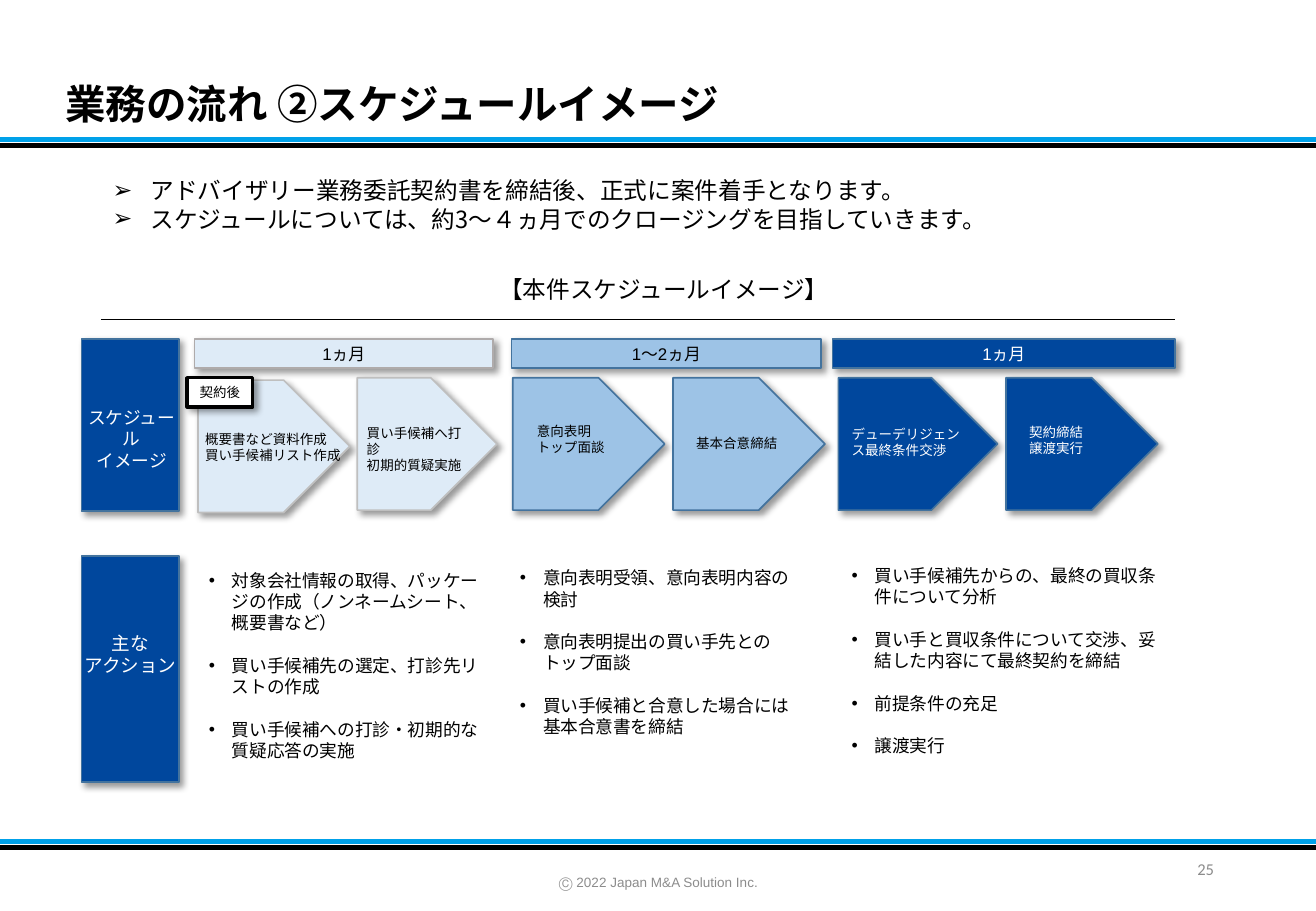
from pptx import Presentation, util as u
from pptx.dml.color import RGBColor
from pptx.enum import shapes, text
from pptx.oxml import parse_xml
from pptx.oxml.ns import nsdecls, qn
from lxml import etree

THEME = {
    "black": "000000", "white": "FFFFFF", "grey": "8C8C8C", "sky": "00A1E9",
    "navy": "00479D", "mid": "9DC3E6", "pale": "DEEBF7",
    "edge": "43739E", "pale_edge": "BFBFBF", "bar_edge": "AFABAB",
    "jp": "Noto Sans CJK JP", "latin": "Arial", "number": "Calibri",
    "title": 24, "lead": 14, "label": 11, "body": 10.5, "bar": 10, "page": 9.8, "small": 8,
}
LEFT, CENTER, RIGHT = text.PP_ALIGN.LEFT, text.PP_ALIGN.CENTER, text.PP_ALIGN.RIGHT
TOP, MIDDLE = text.MSO_ANCHOR.TOP, text.MSO_ANCHOR.MIDDLE
RECT, PLATE = shapes.MSO_SHAPE.RECTANGLE, shapes.MSO_SHAPE.PENTAGON

deck = Presentation()
deck.slide_width, deck.slide_height = u.Inches(10.83), u.Inches(7.5)
COL, ROW = deck.slide_width / 100, deck.slide_height / 100
slide = deck.slides.add_slide(deck.slide_layouts[6])


def place(area, lines=(), size="small", color="black", font="latin", align=LEFT, anchor=TOP,
          bullet=None, gap=0, bold=False, wrap=True, kind=None, fill="white", edge=None, weight=1):
    """Put a text box, or a preset shape when kind is given, on the 100 x 100 grid."""
    x, y, w, h = area
    frame = [int(v) for v in (x * COL, y * ROW, w * COL, h * ROW)]
    if kind is None:
        item = slide.shapes.add_textbox(*frame)
    else:
        item = slide.shapes.add_shape(kind, *frame)
        item.shadow.inherit = False
        item.fill.solid()
        item.fill.fore_color.rgb = RGBColor.from_string(THEME[fill])
        if edge:
            item.line.color.rgb = RGBColor.from_string(THEME[edge])
            item.line.width = u.Pt(weight)
            item._element.spPr.find(qn("a:effectLst")).append(parse_xml(
                f'<a:outerShdw {nsdecls("a")} blurRad="50800" dist="38100" dir="2700000" algn="tl" '
                'rotWithShape="0"><a:srgbClr val="000000"><a:alpha val="40000"/></a:srgbClr></a:outerShdw>'))
        else:
            item.line.fill.background()
    body = item.text_frame
    body.word_wrap, body.vertical_anchor = wrap, anchor
    for i, line in enumerate(lines):
        para = body.add_paragraph() if i else body.paragraphs[0]
        para.alignment = align
        para.line_spacing = u.Pt(THEME[size] * 1.2)
        if i and gap:
            para.space_before = u.Pt(gap)
        if bullet:
            mark, indent = bullet
            props = para._p.get_or_add_pPr()
            props.set("marL", str(u.Inches(indent)))
            props.set("indent", str(-u.Inches(indent)))
            etree.SubElement(props, qn("a:buFont")).set("typeface", THEME["latin"])
            etree.SubElement(props, qn("a:buChar")).set("char", mark)
        run = para.add_run()
        run.text = line
        run.font.size, run.font.bold, run.font.name = u.Pt(THEME[size]), bold, THEME[font]
        run.font.color.rgb = RGBColor.from_string(THEME[color])
        etree.SubElement(run._r.get_or_add_rPr(), qn("a:ea")).set("typeface", THEME["jp"])


def rule(x1, x2, y, color, weight):
    line = slide.shapes.add_connector(shapes.MSO_CONNECTOR.STRAIGHT, int(x1 * COL), int(y * ROW),
                                      int(x2 * COL), int(y * ROW))
    line.line.color.rgb = RGBColor.from_string(THEME[color])
    line.line.width = u.Pt(weight)
    etree.SubElement(line._element.spPr, qn("a:effectLst"))


# Page frame
for sky_y, black_y in ((92.4, 93.07), (15.33, 16)):
    rule(0, 100, sky_y, "sky", 3)
    rule(0, 100, black_y, "black", 3)
place((4.06, 8.27, 74.79, 6.13), ["業務の流れ ②スケジュールイメージ"], "title", font="jp",
      anchor=MIDDLE, bold=True)
place((34.44, 94.8, 31.21, 4), ["Ⓒ 2022 Japan M&A Solution Inc."], color="grey",
      align=CENTER, anchor=MIDDLE)
place((70.64, 92.67, 22.53, 5.33), ["25"], "page", "grey", "number", RIGHT, MIDDLE)

# Introduction and schedule heading
place((7.66, 18.67, 86.33, 7.6),
      ["アドバイザリー業務委託契約書を締結後、正式に案件着手となります。",
       "スケジュールについては、約3～４ヵ月でのクロージングを目指していきます。"],
      "lead", font="jp", bullet=("➢", 0.31))
rule(7.66, 89.29, 35.07, "black", 0.5)
place((37.03, 29.47, 27.33, 4.53), ["【本件スケジュールイメージ】"], "lead", font="jp", kind=RECT)

# Row labels
row_labels = [
    ((37.2, 18.93), (5.17, 44, 9.7, 6.27), "body", ["スケジュール", "イメージ"]),
    ((61.07, 24.8), (5.08, 68.67, 9.7, 8.8), "label", ["主な", "アクション"]),
]
for (y, h), label_area, size, lines in row_labels:
    place((6.19, y, 7.39, h), kind=RECT, fill="navy", edge="edge")
    place(label_area, lines, size, "white", "jp", CENTER)

# Phases: duration bar, two steps (arrow x, y, width; caption x, y, width), actions
phases = [
    {"bar": (14.77, 22.71), "time": "1ヵ月", "fill": "pale", "ink": "black",
     "edges": ("bar_edge", "pale_edge"),
     "steps": [((15.05, 41.73, 11.54), (14.68, 46.67, 12.74), ["概要書など資料作成", "買い手候補リスト作成"]),
               ((27.15, 41.47, 10.62), (26.96, 46, 10.06), ["買い手候補へ打診", "初期的質疑実施"])],
     "at": (14.96, 61.87, 22.71), "font": "jp",
     "actions": ["対象会社情報の取得、パッケージの作成（ノンネームシート、概要書など）",
                 "買い手候補先の選定、打診先リストの作成",
                 "買い手候補への打診・初期的な質疑応答の実施"]},
    {"bar": (38.87, 23.55), "time": "1～2ヵ月", "fill": "mid", "ink": "black",
     "edges": ("edge", "edge"),
     "steps": [((38.97, 41.47, 11.54), (39.89, 45.73, 7.85), ["意向表明", "トップ面談"]),
               ((51.15, 41.47, 11.54), (51.99, 47.07, 8.13), ["基本合意締結"])],
     "at": (38.6, 61.6, 22.71), "font": "jp",
     "actions": ["意向表明受領、意向表明内容の検討",
                 "意向表明提出の買い手先とのトップ面談",
                 "買い手候補と合意した場合には基本合意書を締結"]},
    {"bar": (63.25, 26.04), "time": "1ヵ月", "fill": "navy", "ink": "white",
     "edges": ("edge", "edge"),
     "steps": [((63.71, 41.47, 12.1), (63.8, 46.13, 10.43), ["デューデリジェンス最終条件交渉"]),
               ((76.45, 41.47, 11.54), (77.29, 45.87, 9.51), ["契約締結", "譲渡実行"])],
     "at": (63.8, 61.33, 26.04), "font": "latin",
     "actions": ["買い手候補先からの、最終の買収条件について分析",
                 "買い手と買収条件について交渉、妥結した内容にて最終契約を締結",
                 "前提条件の充足", "譲渡実行"]},
]
for phase in phases:
    bar_x, bar_w = phase["bar"]
    bar_edge, step_edge = phase["edges"]
    place((bar_x, 37.2, bar_w, 3.2), [phase["time"]], "bar", phase["ink"], align=CENTER,
          anchor=MIDDLE, kind=RECT, fill=phase["fill"], edge=bar_edge)
    for arrow, caption, lines in phase["steps"]:
        place((*arrow, 14.53), kind=PLATE, fill=phase["fill"], edge=step_edge)
        place((*caption, 4.93), lines, color=phase["ink"])
    place((*phase["at"], 22.53), phase["actions"], "body", font=phase["font"],
          bullet=("•", 0.19), gap=THEME["body"] * 1.2)

place((14.22, 41.47, 4.99, 3.2), ["契約後"], align=CENTER, wrap=False,
      kind=RECT, edge="black", weight=2)

deck.save("out.pptx")
